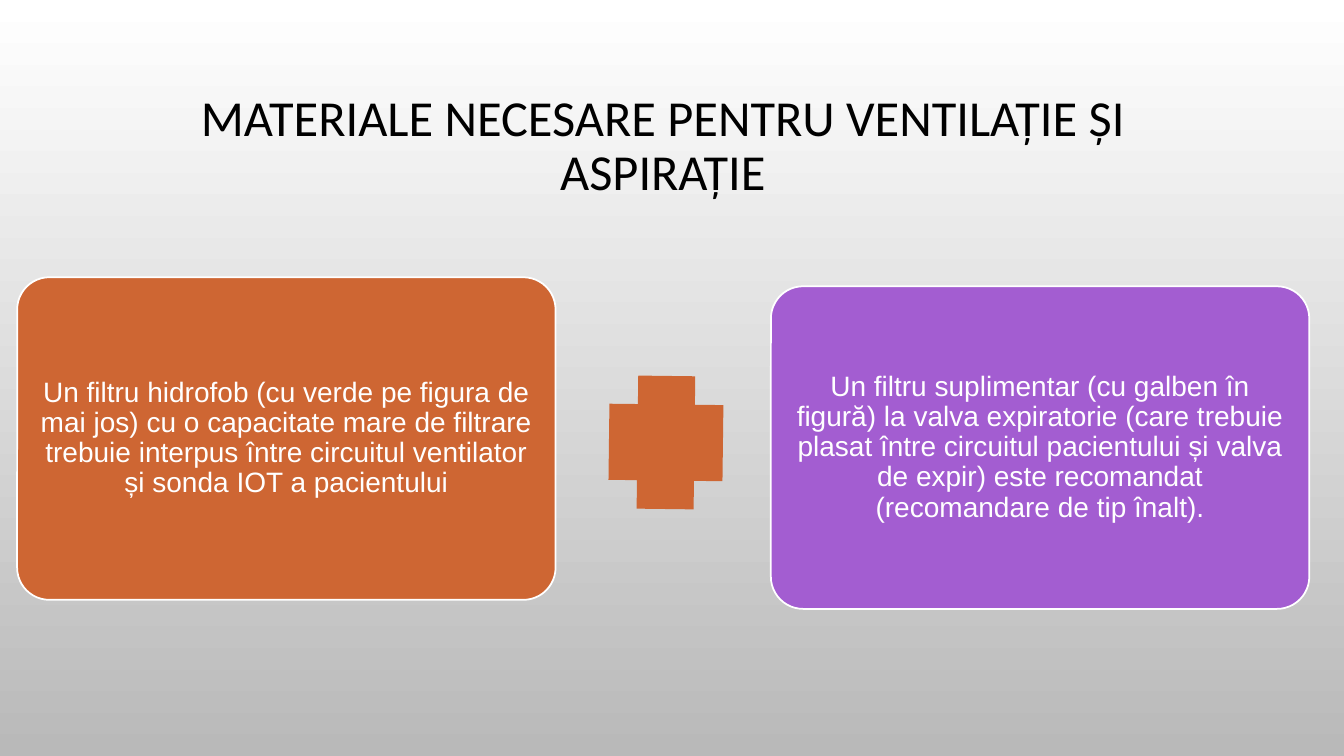
"""Build the slide on materials needed for ventilation and aspiration."""
from typing import NamedTuple

from pptx import Presentation
from pptx.dml.color import RGBColor
from pptx.enum.shapes import MSO_SHAPE
from pptx.enum.text import MSO_ANCHOR, PP_ALIGN
from pptx.util import Inches, Pt

WIDTH, HEIGHT = Inches(13.33), Inches(7.5)
COLORS = {
    "white": "FFFFFF",
    "grey": "B9B9B9",
    "black": "000000",
    "orange": "CE6633",
    "purple": "A35DD1",
}


class Area(NamedTuple):
    """Bounds as percentages of the slide's width and height."""
    left: float
    top: float
    width: float
    height: float

    def bounds(self) -> tuple[int, int, int, int]:
        """Return the bounds as lengths on the slide."""
        return (int(WIDTH * self.left / 100), int(HEIGHT * self.top / 100),
                int(WIDTH * self.width / 100), int(HEIGHT * self.height / 100))


class FilterCard(NamedTuple):
    """A filter recommendation and its place on the slide."""
    left: float
    top: float
    color: str
    advice: str


TITLE_AREA = Area(6.83, 4, 85, 23.33)
PLUS_AREA = Area(45.31, 49.73, 8.48, 17.6)
CARD_WIDTH, CARD_HEIGHT = 40.06, 42.67
FILTER_CARDS = [
    FilterCard(1.28, 36.67, "orange",
               "Un filtru hidrofob (cu verde pe figura de mai jos) cu o capacitate mare "
               "de filtrare trebuie interpus între circuitul ventilator și sonda IOT a "
               "pacientului"),
    FilterCard(57.36, 37.87, "purple",
               "Un filtru suplimentar (cu galben în figură) la valva expiratorie (care "
               "trebuie plasat între circuitul pacientului și valva de expir) este "
               "recomandat (recomandare de tip înalt)."),
]


def rgb(name: str) -> RGBColor:
    """Look up a named colour."""
    return RGBColor.from_string(COLORS[name])


def write(owner, wording: str, font: str, size: int, color: str) -> None:
    """Write one centred paragraph into a shape."""
    owner.text_frame.word_wrap = True
    paragraph = owner.text_frame.paragraphs[0]
    paragraph.text = wording
    paragraph.alignment = PP_ALIGN.CENTER
    paragraph.line_spacing = 0.9
    paragraph.font.name = font
    paragraph.font.size = Pt(size)
    paragraph.font.color.rgb = rgb(color)


def add_solid(slide, preset: MSO_SHAPE, area: Area, color: str):
    """Add a flat preset shape without an outline."""
    solid = slide.shapes.add_shape(preset, *area.bounds())
    solid.shadow.inherit = False
    solid.fill.solid()
    solid.fill.fore_color.rgb = rgb(color)
    solid.line.fill.background()
    return solid


def add_filter_card(slide, card: FilterCard) -> None:
    """Add a rounded card with its recommendation."""
    area = Area(card.left, card.top, CARD_WIDTH, CARD_HEIGHT)
    panel = add_solid(slide, MSO_SHAPE.ROUNDED_RECTANGLE, area, card.color)
    panel.adjustments[0] = 0.1
    panel.line.color.rgb = rgb("white")
    panel.line.width = Pt(1.25)
    frame = panel.text_frame
    frame.vertical_anchor = MSO_ANCHOR.MIDDLE
    frame.margin_left = frame.margin_right = Inches(0.08)
    frame.margin_top = frame.margin_bottom = Inches(0.08)
    write(panel, card.advice, "Arial", 20, "white")


def add_title(slide) -> None:
    """Place and format the slide's title."""
    title = slide.shapes.title
    title.left, title.top, title.width, title.height = TITLE_AREA.bounds()
    title.text_frame.vertical_anchor = MSO_ANCHOR.BOTTOM
    write(title, "MATERIALE NECESARE PENTRU VENTILAȚIE ȘI ASPIRAȚIE",
          "Calibri", 36, "black")


def paint_background(slide) -> None:
    """Fade the background from white at the top to grey."""
    fill = slide.background.fill
    fill.gradient()
    fill.gradient_angle = 270
    for stop, position, color in zip(fill.gradient_stops, (0, 1), ("white", "grey")):
        stop.position = position
        stop.color.rgb = rgb(color)


def main() -> None:
    """Build and save the presentation."""
    deck = Presentation()
    deck.slide_width, deck.slide_height = WIDTH, HEIGHT
    slide = deck.slides.add_slide(deck.slide_layouts[5])
    paint_background(slide)
    add_title(slide)
    for card in FILTER_CARDS:
        add_filter_card(slide, card)
    plus = add_solid(slide, MSO_SHAPE.CROSS, PLUS_AREA, "orange")
    plus.rotation = 0.7
    deck.save("out.pptx")


if __name__ == "__main__":
    main()
